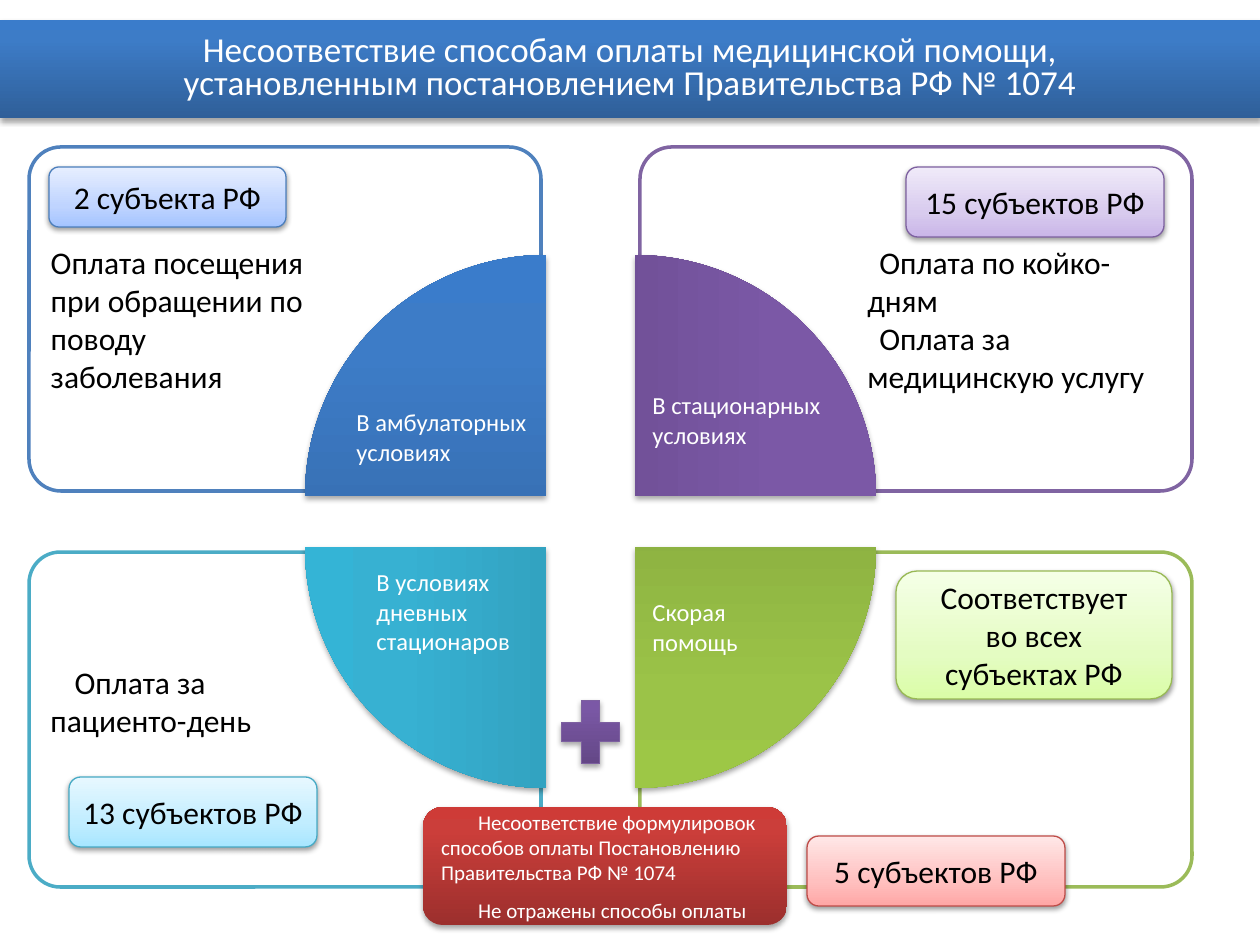
from dataclasses import dataclass

from lxml import etree
from pptx import Presentation
from pptx import util as u
from pptx.dml.color import RGBColor
from pptx.enum import shapes, text
from pptx.oxml.ns import qn

PX = 914400 / 126
SHAPE, ALIGN, ANCHOR = shapes.MSO_SHAPE, text.PP_ALIGN, text.MSO_ANCHOR


@dataclass(frozen=True)
class Hue:
    deep: tuple   # gradient stops at 0, 80 and 100 %
    pale: tuple   # gradient stops at 0, 35 and 100 %
    edge: str
    frame: str = ""


class Theme:
    font = "Calibri"
    title, body, label, note = 20, 18, 14, 12
    dark, light = "000000", "FFFFFF"
    blue = Hue(("2F5F99", "3D7CC7", "3A7CCB"), ("A4C4FF", "BFD4FF", "E6EEFF"), "4B7EBC", "4F81BD")
    purple = Hue(("5F4480", "7B58A6", "7C57A8"), ("C9B5E8", "D8CBEE", "F0EAF9"), "7D60A0", "8064A2")
    green = Hue(("779737", "9BC348", "9DC746"), ("DAFDA7", "E4FCC2", "F5FFE7"), "98B955", "9BBB59")
    teal = Hue(("2A88A2", "37B1D2", "34B4D6"), ("A7E6FF", "C1EDFF", "E7F8FF"), "46AAC5", "4BACC6")
    red = Hue(("9C2F2D", "CB3E3A", "CE3B37"), ("FFA6A5", "FFC0BF", "FFE7E7"), "BF4C48")


def px(length):
    return u.Emu(round(length * PX))


def place(box):
    return [px(side) for side in box]


def within(box, part):
    """Move a part given relative to a box onto the slide."""
    return box[0] + part[0], box[1] + part[1], part[2], part[3]


def write(shape, paragraphs, size, color, align=ALIGN.LEFT, indent=0, before=0,
          spacing=None, **frame_format):
    frame = shape.text_frame
    settings = dict(word_wrap=True, auto_size=text.MSO_AUTO_SIZE.NONE,
                    vertical_anchor=ANCHOR.MIDDLE) | frame_format
    for name, value in settings.items():
        setattr(frame, name, value)
    for index, words in enumerate(paragraphs):
        paragraph = frame.paragraphs[0] if index == 0 else frame.add_paragraph()
        paragraph.text = words
        layout = dict(alignment=align, line_spacing=spacing,
                      space_before=u.Pt(before if index else 0))
        for name, value in layout.items():
            setattr(paragraph, name, value)
        if indent:
            properties = paragraph._p.get_or_add_pPr()
            properties.set("marL", "0")
            properties.set("indent", str(px(indent)))
        for run in paragraph.runs:
            run.font.name, run.font.size = Theme.font, u.Pt(size)
            run.font.color.rgb = RGBColor.from_string(color)


def outline(shape, color, width):
    if color:
        shape.line.color.rgb = RGBColor.from_string(color)
        shape.line.width = u.Pt(width)
    else:
        shape.line.fill.background()


def shade(shape, colors, middle, edge=None, distance=23000, alpha=35):
    """Three-stop upward gradient, optional thin outline and a soft shadow below."""
    shape.fill.gradient()
    shape.fill.gradient_angle = 90
    properties = shape._element.spPr
    stops = properties.find(qn("a:gradFill")).find(qn("a:gsLst"))
    for stop in list(stops):
        stops.remove(stop)
    for position, color in zip((0, middle, 100), colors):
        stop = etree.SubElement(stops, qn("a:gs"), pos=str(position * 1000))
        etree.SubElement(stop, qn("a:srgbClr"), val=color)
    outline(shape, edge, 0.75)
    shape.shadow.inherit = False
    shadow = etree.SubElement(properties.find(qn("a:effectLst")), qn("a:outerShdw"),
                              blurRad="40000", dist=str(distance), dir="5400000",
                              rotWithShape="0")
    tint = etree.SubElement(shadow, qn("a:srgbClr"), val=Theme.dark)
    etree.SubElement(tint, qn("a:alpha"), val=str(alpha * 1000))


def banner(slide, box):
    title = slide.shapes.title
    title.left, title.top, title.width, title.height = place(box)
    shade(title, Theme.blue.deep, 80)
    write(title, ["Несоответствие способам оплаты медицинской помощи,\v"
                  "установленным постановлением Правительства РФ № 1074"],
          Theme.title, Theme.light, ALIGN.CENTER, spacing=0.8)


def badge(slide, box, words, hue, **frame_format):
    plate = slide.shapes.add_shape(SHAPE.ROUNDED_RECTANGLE, *place(box))
    shade(plate, hue.pale, 35, hue.edge, distance=20000, alpha=38)
    write(plate, [words], Theme.body, Theme.dark, ALIGN.CENTER, **frame_format)


def card(slide, box, hue, paragraphs, **layout):
    frame = slide.shapes.add_shape(SHAPE.ROUNDED_RECTANGLE, *place(box))
    frame.adjustments[0] = 0.093
    frame.shadow.inherit = False
    frame.fill.solid()
    frame.fill.fore_color.rgb = RGBColor.from_string(Theme.light)
    outline(frame, hue.frame, 2)
    if paragraphs:
        write(frame, paragraphs, Theme.body, Theme.dark, **layout)


def quarter(slide, box, hue, turn, radius=241, overhang=5):
    """Quarter disc whose corner lies just past the card corner facing the centre."""
    on_left, on_top = turn in (0, 270), turn in (0, 90)
    center_x = box[0] + box[2] + overhang if on_left else box[0] - overhang
    center_y = box[1] + box[3] + overhang if on_top else box[1] - overhang
    pie = slide.shapes.add_shape(SHAPE.PIE, *place(
        (center_x - radius, center_y - radius, 2 * radius, 2 * radius)))
    pie.adjustments[0], pie.adjustments[1] = 108, 162
    pie.rotation = turn
    shade(pie, hue.deep, 80)


def quadrant(slide, box, hue, turn, label, label_box, count, count_box,
             methods=(), methods_layout=None, count_layout=None):
    card(slide, box, hue, methods, **(methods_layout or {}))
    badge(slide, within(box, count_box), count, hue, **(count_layout or {}))
    quarter(slide, box, hue, turn)
    caption = slide.shapes.add_textbox(*place(within(box, label_box)))
    write(caption, [label], Theme.label, Theme.light, vertical_anchor=ANCHOR.TOP,
          auto_size=text.MSO_AUTO_SIZE.SHAPE_TO_FIT_TEXT)


def mismatch_note(slide, box):
    note = slide.shapes.add_shape(SHAPE.ROUNDED_RECTANGLE, *place(within(box, (0, 0, 364, 118))))
    shade(note, Theme.red.deep, 80)
    write(note, ["Несоответствие формулировок способов оплаты Постановлению Правительства РФ № 1074",
                 "Не отражены способы оплаты"],
          Theme.note, Theme.light, indent=37, before=7)
    badge(slide, within(box, (384, 29, 258, 70)), "5 субъектов РФ", Theme.red)


def plus_sign(slide, box):
    plus = slide.shapes.add_shape(SHAPE.MATH_PLUS, *place(box))
    shade(plus, Theme.purple.deep, 80, Theme.purple.edge)


def main():
    deck = Presentation()
    deck.slide_width, deck.slide_height = px(1260), px(945)
    slide = deck.slides.add_slide(deck.slide_layouts[5])
    left, right = (29, 512), (640, 552)
    top, bottom = (147, 344), (552, 335)
    wide = px(218)

    banner(slide, (0, 20, 1260, 98))
    quadrant(slide, (left[0], top[0], left[1], top[1]), Theme.blue, 0,
             "В амбулаторных условиях", (315, 254, 197, 72),
             "2 субъекта РФ", (20, 20, 237, 60),
             ["Оплата посещения при обращении по поводу заболевания"],
             dict(margin_right=wide))
    quadrant(slide, (right[0], top[0], right[1], top[1]), Theme.purple, 90,
             "В стационарных условиях", (0, 237, 197, 72),
             "15 субъектов РФ", (266, 20, 258, 70),
             ["Оплата по койко-дням", "Оплата за медицинскую услугу"],
             dict(margin_left=wide, indent=12))
    quadrant(slide, (right[0], bottom[0], right[1], bottom[1]), Theme.green, 180,
             "Скорая помощь", (0, 39, 168, 72),
             "Соответствует\vво всех\vсубъектах РФ", (256, 19, 276, 128))
    quadrant(slide, (left[0], bottom[0], left[1], bottom[1]), Theme.teal, 270,
             "В условиях дневных стационаров", (335, 9, 168, 102),
             "13 субъектов РФ", (40, 225, 248, 70),
             ["Оплата за пациенто-день"],
             dict(margin_right=wide, margin_bottom=px(44), indent=24),
             dict(margin_left=px(5), margin_right=px(5)))
    plus_sign(slide, (551, 689, 79, 86))
    mismatch_note(slide, (423, 807, 642, 118))
    deck.save("out.pptx")


if __name__ == "__main__":
    main()
